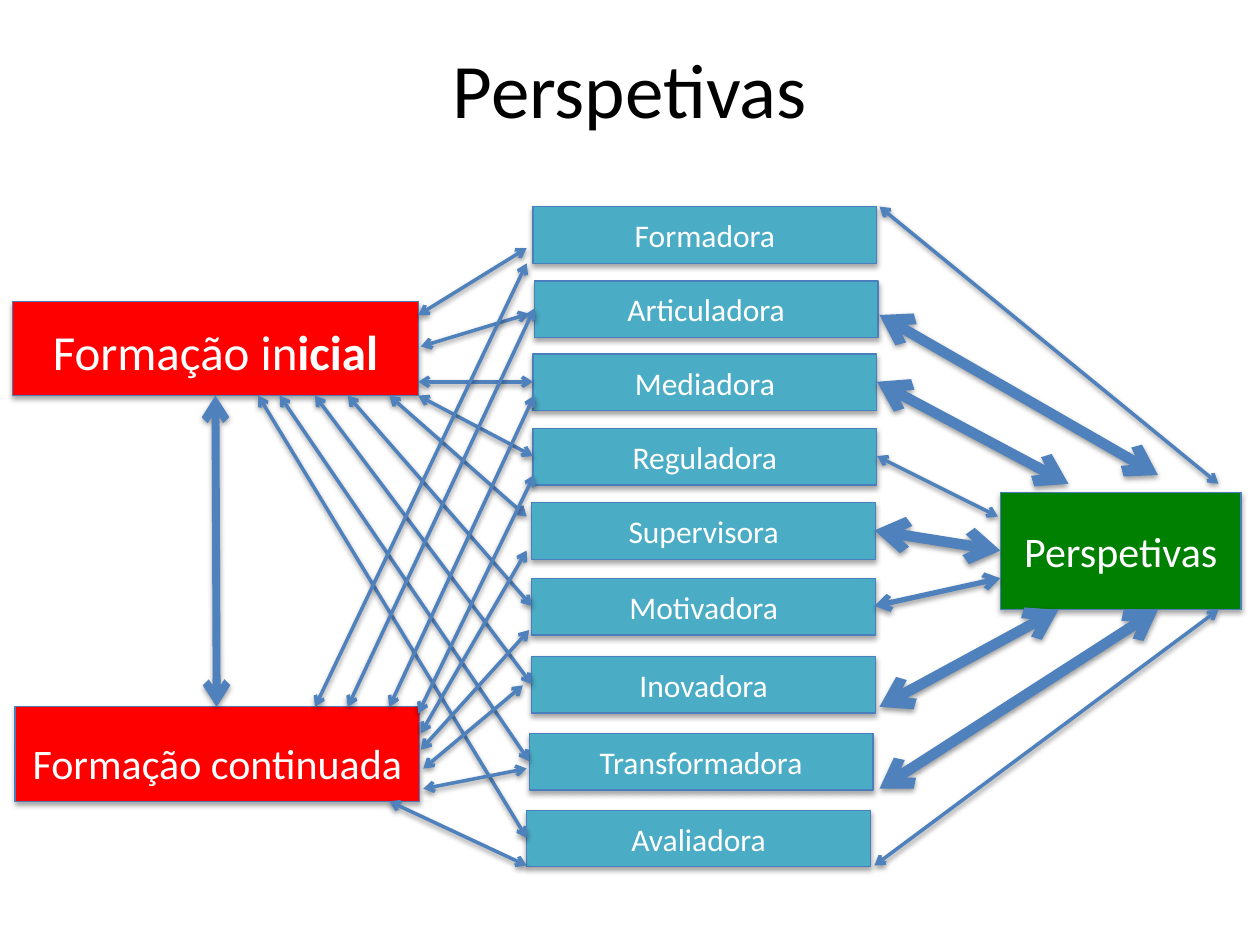
from lxml import etree
from pptx import Presentation
from pptx.dml.color import RGBColor
from pptx.enum import shapes, text
from pptx.oxml import parse_xml
from pptx.oxml.ns import qn
from pptx.util import Inches, Pt

A = "http://schemas.openxmlformats.org/drawingml/2006/main"


def color(value):
    return RGBColor.from_string(value)


def add_shadow(sp, alpha, dist):
    sp._element.spPr.append(parse_xml(
        f'<a:effectLst xmlns:a="{A}"><a:outerShdw blurRad="{Pt(3.1)}" dist="{Pt(dist)}" '
        f'dir="5400000" rotWithShape="0"><a:srgbClr val="000000">'
        f'<a:alpha val="{alpha * 1000}"/></a:srgbClr></a:outerShdw></a:effectLst>'))


prs = Presentation()
prs.slide_width, prs.slide_height = Inches(10), Inches(7.5)
s = prs.slides.add_slide(prs.slide_layouts[6])

title = s.shapes.add_textbox(Inches(0.5), Inches(0.07), Inches(9), Inches(1.25))
tf = title.text_frame
tf.word_wrap = True
tf.vertical_anchor = text.MSO_ANCHOR.MIDDLE
p = tf.paragraphs[0]
p.text = "Perspetivas"
p.alignment = text.PP_ALIGN.CENTER
p.runs[0].font.size = Pt(44)
p.runs[0].font.name = "Calibri"
p.runs[0].font.color.rgb = color("000000")

boxes = [
    (0.1, 2.39, 3.22, 0.75, "FF0000", 28, 0.09, ["Formação in", "icial"]),
    (0.12, 5.61, 3.21, 0.75, "FF0000", 24, 0.19, ["Formação continuada"]),
    (7.94, 3.91, 1.91, 0.93, "008000", 24, 0.05, ["Perspetivas"]),
]
roles = [
    ("Formadora", 4.23, 1.64), ("Articuladora", 4.24, 2.23), ("Mediadora", 4.23, 2.81),
    ("Reguladora", 4.23, 3.4), ("Supervisora", 4.22, 3.99), ("Motivadora", 4.22, 4.59),
    ("Inovadora", 4.22, 5.21), ("Transformadora", 4.2, 5.82), ("Avaliadora", 4.18, 6.43),
]
boxes += [(x, y, 2.73, 0.45, "4BACC6", 18, 0.05, [name]) for name, x, y in roles]

for x, y, w, h, fill, size, top, parts in boxes:
    sp = s.shapes.add_shape(shapes.MSO_SHAPE.RECTANGLE, Inches(x), Inches(y), Inches(w), Inches(h))
    sp.fill.solid()
    sp.fill.fore_color.rgb = color(fill)
    sp.line.color.rgb = color("4B7EBC")
    sp.line.width = Pt(0.75)
    add_shadow(sp, 35, 1.8)
    tf = sp.text_frame
    tf.word_wrap = True
    tf.vertical_anchor = text.MSO_ANCHOR.MIDDLE
    tf.margin_top = Inches(top)
    p = tf.paragraphs[0]
    p.alignment = text.PP_ALIGN.CENTER
    for i, part in enumerate(parts):
        r = p.add_run()
        r.text = part
        r.font.size = Pt(size)
        r.font.name = "Calibri"
        r.font.bold = i > 0
        r.font.color.rgb = color("FFFFFF")

arrows = [
    (1.71, 3.14, 1.72, 5.61, 4.5),
    (6.98, 1.64, 9.67, 3.84, 2),
    (6.98, 2.5, 9.19, 3.77, 6),
    (6.96, 3.03, 8.48, 3.84, 6),
    (6.96, 3.62, 7.92, 4.1, 2),
    (6.94, 4.21, 7.94, 4.37, 6),
    (6.94, 4.81, 7.94, 4.59, 3),
    (6.98, 5.61, 8.4, 4.84, 6),
    (6.98, 6.26, 9.19, 4.84, 6),
    (6.94, 6.87, 9.67, 4.84, 2),
]
initial_links = [
    (3.32, 2.5, 4.18, 1.97), (3.34, 2.75, 4.2, 2.49), (3.32, 3.03, 4.23, 3.03),
    (3.32, 3.14, 4.23, 3.62), (3.09, 3.14, 4.18, 4.1), (2.76, 3.14, 4.22, 4.81),
    (2.5, 3.14, 4.22, 5.43), (2.22, 3.14, 4.2, 6.04), (2.05, 3.14, 4.18, 6.65),
]
continued_links = [
    (2.5, 5.61, 4.18, 2.09), (2.76, 5.61, 4.24, 2.45), (3.09, 5.61, 4.24, 3.14),
    (3.32, 5.66, 4.24, 3.77), (3.34, 5.82, 4.18, 4.37), (3.34, 5.95, 4.2, 5),
    (3.36, 6.1, 4.15, 5.44), (3.36, 6.26, 4.18, 6.1), (3.09, 6.36, 4.18, 6.87),
]
arrows += [(*link, 2) for link in initial_links + continued_links]

for x1, y1, x2, y2, width in arrows:
    c = s.shapes.add_connector(shapes.MSO_CONNECTOR.STRAIGHT,
                               Inches(x1), Inches(y1), Inches(x2), Inches(y2))
    c.line.color.rgb = color("4F81BD")
    c.line.width = Pt(width)
    ln = c.line._get_or_add_ln()
    for end in ("a:headEnd", "a:tailEnd"):
        etree.SubElement(ln, qn(end), type="arrow")
    add_shadow(c, 38, 1.6)

prs.save("out.pptx")
